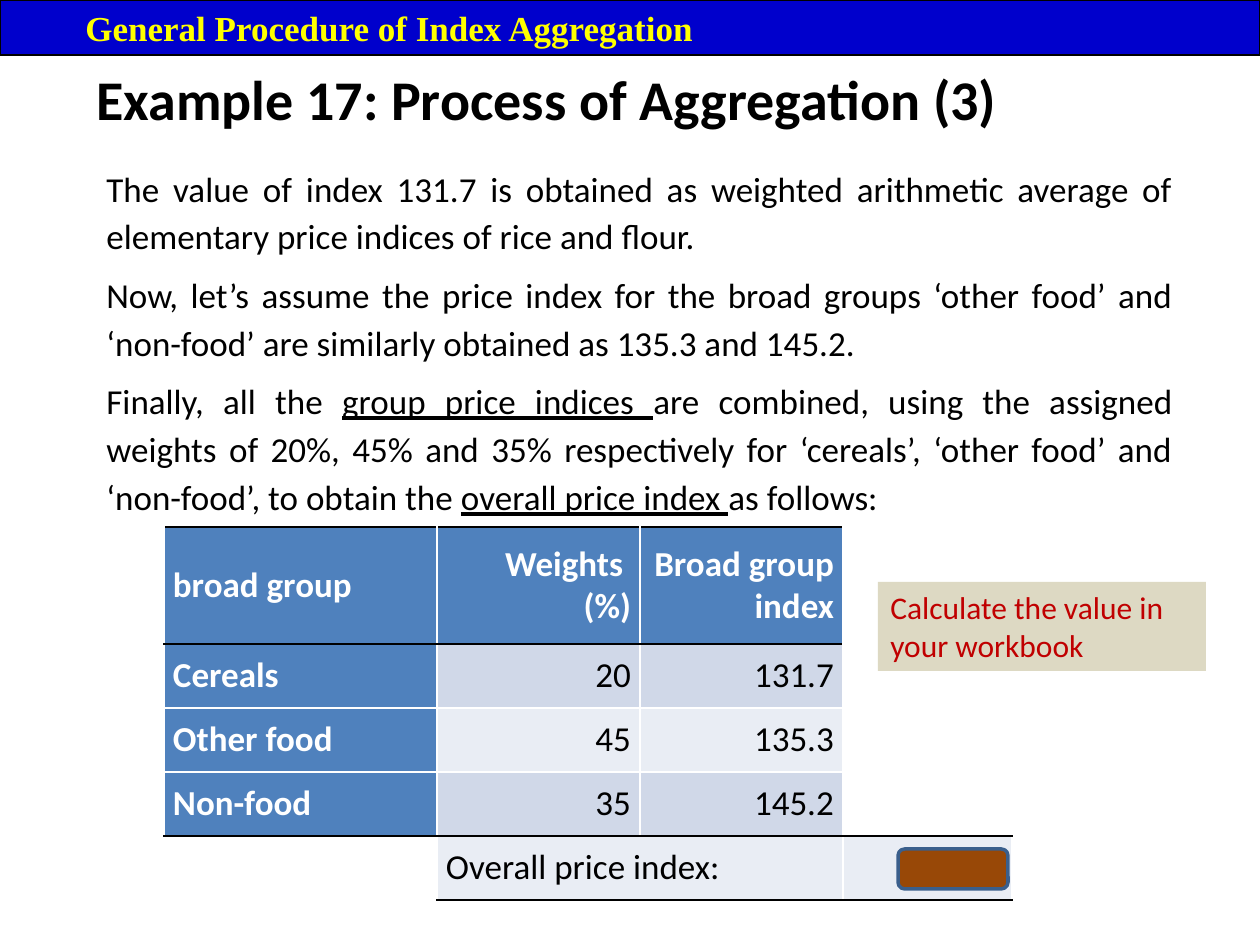
from lxml.etree import SubElement
from pptx import Presentation
from pptx.dml.color import RGBColor
from pptx.enum.shapes import MSO_SHAPE as Shape
from pptx.enum.text import MSO_ANCHOR as Anchor, PP_ALIGN as Align
from pptx.oxml.ns import qn
from pptx.util import Emu, Pt

COLORS = {
    "bar": "0000CC", "bar_text": "FFFF00", "black": "000000", "white": "FFFFFF",
    "head": "4F81BD", "dark_band": "D0D8E8", "light_band": "E9EDF4",
    "note": "DDD9C3", "note_text": "C00000", "block": "984807", "block_line": "3A5F8C",
}
BODY = [
    [("The value of index 131.7 is obtained as weighted arithmetic average of "
      "elementary price indices of rice and flour.", False)],
    [("Now, let’s assume the price index for the broad groups ‘other food’ and "
      "‘non-food’ are similarly obtained as 135.3 and 145.2.", False)],
    [("Finally, all the ", False), ("group price indices ", True),
     ("are combined, using the assigned weights of 20%, 45% and 35% respectively for "
      "‘cereals’, ‘other food’ and ‘non-food’, to obtain the ", False),
     ("overall price index ", True), ("as follows:", False)],
]
TABLE = [
    ["broad group", "Weights \n(%)", "Broad group index", ""],
    ["Cereals", "20", "131.7", ""],
    ["Other food", "45", "135.3", ""],
    ["Non-food", "35", "145.2", ""],
    ["", "Overall price index:", "", ""],
]
COLUMN_WIDTHS = [273, 203, 203, 169]
ROW_HEIGHTS = [117, 64, 64, 64, 64]
# Columns with a black rule, by the row that the rule lies above
BLACK_RULES = {0: (0, 1, 2), 1: (0, 1, 2), 4: (0, 1, 2, 3), 5: (1, 2, 3)}


def px(length):
    return Emu(round(length * 914400 / 126))


def rgb(name):
    return RGBColor.from_string(COLORS[name])


def set_values(target, values):
    for name, value in values.items():
        setattr(target, name, value)


def add_span(para, text, color, **font):
    span = para.add_run()
    span.text = text
    set_values(span.font, {"name": "Calibri", "size": Pt(20), **font})
    span.font.color.rgb = rgb(color)


def add_text_box(page, frame, anchor=Anchor.TOP):
    box = page.shapes.add_textbox(*map(px, frame))
    set_values(box.text_frame, {"word_wrap": True, "vertical_anchor": anchor})
    return box.text_frame


def add_block(page, kind, frame, fill, line=None, width=0):
    block = page.shapes.add_shape(kind, *map(px, frame))
    block.shadow.inherit = False
    block.fill.solid()
    block.fill.fore_color.rgb = rgb(fill)
    if line:
        block.line.color.rgb = rgb(line)
        block.line.width = Pt(width)
    else:
        block.line.fill.background()
    set_values(block.text_frame, {"word_wrap": True, "vertical_anchor": Anchor.TOP})
    block.text_frame.paragraphs[0].alignment = Align.LEFT
    return block.text_frame


def add_body(page, frame):
    text_frame = add_text_box(page, frame)
    for index, spans in enumerate(BODY):
        para = text_frame.add_paragraph() if index else text_frame.paragraphs[0]
        set_values(para, {"alignment": Align.JUSTIFY, "line_spacing": 1.14,
                          "space_before": Pt(6)})
        for text, underline in spans:
            add_span(para, text, "black", underline=underline)


def set_borders(cell, row, column):
    properties = cell._tc.get_or_add_tcPr()
    rules = {"L": None, "R": None, "T": row, "B": row + 1}
    for side, rule in rules.items():
        color = "black" if column in BLACK_RULES.get(rule, ()) else "white"
        line = SubElement(properties, qn(f"a:ln{side}"), w=str(Pt(1)))
        fill = SubElement(line, qn("a:solidFill"))
        SubElement(fill, qn("a:srgbClr"), val=COLORS[color])


def cell_fill(row, column):
    if row < 4 and column < 3:
        if row == 0 or column == 0:
            return "head"
        return "dark_band" if row % 2 else "light_band"
    return "light_band" if row == 4 and column > 0 else None


def fill_cell(cell, row, column, text):
    set_borders(cell, row, column)
    set_values(cell, {"vertical_anchor": Anchor.MIDDLE, "margin_left": px(9),
                      "margin_right": px(9), "margin_top": 0, "margin_bottom": 0})
    fill = cell_fill(row, column)
    if not fill:
        cell.fill.background()
        return
    cell.fill.solid()
    cell.fill.fore_color.rgb = rgb(fill)
    left = column == 0 or row == 4
    is_head = fill == "head"
    for index, line in enumerate(text.split("\n") if text else []):
        text_frame = cell.text_frame
        para = text_frame.add_paragraph() if index else text_frame.paragraphs[0]
        para.alignment = Align.LEFT if left else Align.RIGHT
        add_span(para, line, "white" if is_head else "black", bold=is_head)


def add_index_table(page, left, top):
    frame = (left, top, sum(COLUMN_WIDTHS), sum(ROW_HEIGHTS))
    table = page.shapes.add_table(len(TABLE), len(COLUMN_WIDTHS), *map(px, frame)).table
    set_values(table, {"first_row": False, "horz_banding": False})
    for column, width in zip(table.columns, COLUMN_WIDTHS):
        column.width = px(width)
    for row, height in zip(table.rows, ROW_HEIGHTS):
        row.height = px(height)
    for row, texts in enumerate(TABLE):
        for column, text in enumerate(texts):
            fill_cell(table.cell(row, column), row, column, text)
    table.cell(4, 1).merge(table.cell(4, 2))


def main():
    deck = Presentation()
    deck.slide_width, deck.slide_height = px(1260), px(945)
    page = deck.slides.add_slide(deck.slide_layouts[6])

    # Title and section bar
    title = add_text_box(page, (84, 55, 1113, 87), Anchor.MIDDLE)
    add_span(title.paragraphs[0], "Example 17: Process of Aggregation (3)", "black",
             size=Pt(32), bold=True)
    bar = add_block(page, Shape.RECTANGLE, (0, 0, 1260, 55), "bar", "black", 0.75)
    heading = bar.paragraphs[0]
    heading._p.get_or_add_pPr().set("indent", str(px(73)))
    add_span(heading, "General Procedure of Index Aggregation", "bar_text",
             name="Times New Roman", bold=True)

    # Explanation and index table
    add_body(page, (94, 155, 1091, 373))
    add_index_table(page, 164, 527)

    # Block in the result cell, and the task note
    add_block(page, Shape.ROUNDED_RECTANGLE, (898, 849, 110, 40), "block", "block_line", 2)
    note = add_block(page, Shape.RECTANGLE, (878, 582, 328, 89), "note")
    add_span(note.paragraphs[0], "Calculate the value in your workbook", "note_text",
             size=Pt(18))

    deck.save("out.pptx")


if __name__ == "__main__":
    main()
